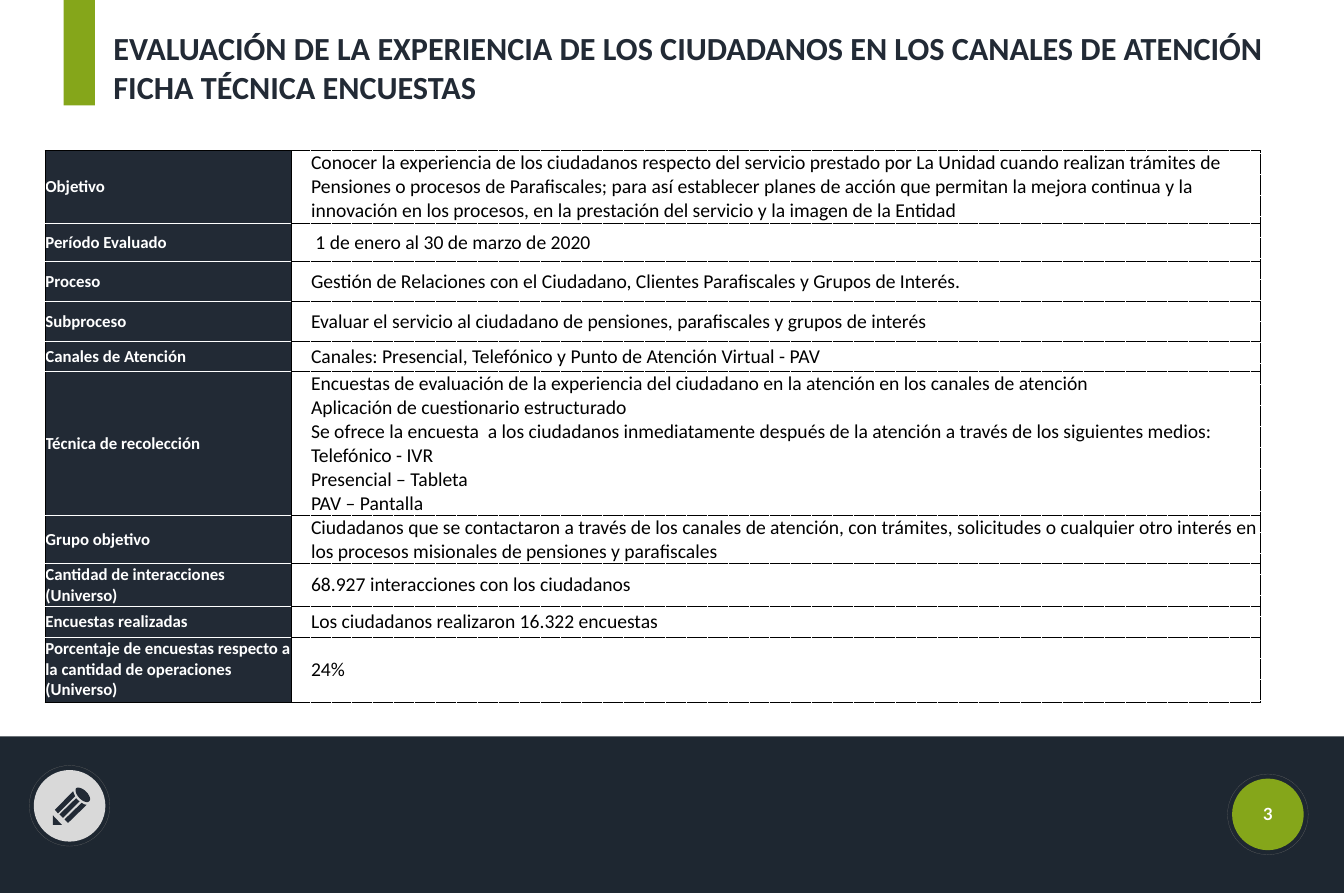
"""Build the survey fact-sheet slide on citizen experience across service channels."""
import dataclasses

import lxml.etree
import pptx
import pptx.dml.color
import pptx.enum.dml
import pptx.enum.shapes
import pptx.enum.text
import pptx.oxml.ns
import pptx.util

Pt = pptx.util.Pt
SHAPES = pptx.enum.shapes.MSO_SHAPE
ALIGN = pptx.enum.text.PP_ALIGN
ANCHOR = pptx.enum.text.MSO_ANCHOR


@dataclasses.dataclass(frozen=True)
class Theme:
    navy: str = "222A35"
    footer: str = "1E2731"
    green: str = "85A61A"
    grey: str = "D9D9D9"
    ring: str = "666666"
    white: str = "FFFFFF"
    black: str = "000000"
    font: str = "Calibri"
    number_font: str = "Lato"
    title_size: int = 46
    label_size: int = 24
    value_size: int = 28


theme = Theme()


def add_filled(shapes, kind, left, top, width, height, color):
    shape = shapes.add_shape(kind, Pt(left), Pt(top), Pt(width), Pt(height))
    shape.shadow.inherit = False
    shape.fill.solid()
    shape.fill.fore_color.rgb = pptx.dml.color.RGBColor.from_string(color)
    shape.line.fill.background()
    return shape


def format_text(text_frame, font, size, color, bold, alignment=ALIGN.LEFT):
    for paragraph in text_frame.paragraphs:
        paragraph.alignment = alignment
        for run in paragraph.runs:
            run.font.name = font
            run.font.size = Pt(size)
            run.font.bold = bold
            run.font.color.rgb = pptx.dml.color.RGBColor.from_string(color)


presentation = pptx.Presentation()
presentation.slide_width = Pt(1919.52)
presentation.slide_height = Pt(1275.84)
slide = presentation.slides.add_slide(presentation.slide_layouts[5])
shapes = slide.shapes

add_filled(shapes, SHAPES.RECTANGLE, 0, 1051.92, 1919.52, 223.92, theme.footer)
add_filled(shapes, SHAPES.RECTANGLE, 90.72, 0, 44.64, 150.5, theme.green)

badge_size, ring_gap = 102.24, 6.5
for left, top, color in [(48.24, 1100.16, theme.grey), (1759.68, 1112.4, theme.green)]:
    add_filled(shapes, SHAPES.OVAL, left, top, badge_size, badge_size, color)
    ring_size = badge_size + 2 * ring_gap
    ring = add_filled(shapes, SHAPES.OVAL, left - ring_gap, top - ring_gap,
                      ring_size, ring_size, theme.footer)
    ring.fill.background()
    ring.line.color.rgb = pptx.dml.color.RGBColor.from_string(theme.ring)
    ring.line.width = Pt(0.25)
    ring.line.dash_style = pptx.enum.dml.MSO_LINE.SQUARE_DOT

eraser_curves = [
    [(46, 3), (43, 7), (46, 16), (53, 23)],
    [(53, 23), (60, 30), (69, 33), (72, 29)],
    [(72, 29), (76, 26), (73, 17), (66, 10)],
    [(66, 10), (59, 3), (50, 0), (46, 3)],
]
curve_steps = 6
eraser = []
for start, first, second, end in eraser_curves:
    for step in range(curve_steps):
        t = step / curve_steps
        weights = [(1 - t) ** 3, 3 * t * (1 - t) ** 2, 3 * t ** 2 * (1 - t), t ** 3]
        eraser.append(tuple(
            sum(weight * point[axis] for weight, point in zip(weights, (start, first, second, end)))
            for axis in (0, 1)))
pencil_outlines = [
    [(0, 57), (18, 76), (0, 76)],
    eraser,
    [(57, 32), (23, 65), (30, 72), (67, 36), (62, 35)],
    [(50, 27), (46, 23), (13, 55), (20, 62), (53, 29)],
    [(40, 9), (4, 46), (10, 53), (44, 19), (42, 14)],
]
scaled_outlines = [[(10 * x, 10 * y) for x, y in outline] for outline in pencil_outlines]
builder = shapes.build_freeform(*scaled_outlines[0][0], scale=Pt(0.072))
for index, outline in enumerate(scaled_outlines):
    if index:
        builder.move_to(*outline[0])
    builder.add_line_segments(outline[1:], close=True)
pencil = builder.convert_to_shape(Pt(75.6), Pt(1123.92))
pencil.shadow.inherit = False
pencil.fill.solid()
pencil.fill.fore_color.rgb = pptx.dml.color.RGBColor.from_string(theme.navy)
pencil.line.fill.background()

page_number = shapes.add_textbox(Pt(1765.44), Pt(1141.2), Pt(90.72), Pt(43.92))
page_number.text_frame.word_wrap = True
page_number.text_frame.vertical_anchor = ANCHOR.MIDDLE
page_number.text_frame.text = "3"
format_text(page_number.text_frame, theme.number_font, theme.label_size, theme.white, True,
            ALIGN.CENTER)

title = shapes.title
title.left, title.top, title.width, title.height = Pt(154.8), Pt(36.72), Pt(1686.24), Pt(118.8)
title.text_frame.text = (
    "EVALUACIÓN DE LA EXPERIENCIA DE LOS CIUDADANOS EN LOS CANALES DE ATENCIÓN\n"
    "FICHA TÉCNICA ENCUESTAS")
title.text_frame.word_wrap = True
title.text_frame.auto_size = pptx.enum.text.MSO_AUTO_SIZE.NONE
title.text_frame.vertical_anchor = ANCHOR.TOP
format_text(title.text_frame, theme.font, theme.title_size, theme.navy, True)

fact_rows = [
    (103.5, "Objetivo",
     "Conocer la experiencia de los ciudadanos respecto del servicio prestado por La Unidad "
     "cuando realizan trámites de Pensiones o procesos de Parafiscales; para así establecer "
     "planes de acción que permitan la mejora continua y la innovación en los procesos, en la "
     "prestación del servicio y la imagen de la Entidad"),
    (54.5, "Período Evaluado", " 1 de enero al 30 de marzo de 2020"),
    (57.5, "Proceso",
     "Gestión de Relaciones con el Ciudadano, Clientes Parafiscales y Grupos de Interés."),
    (57.5, "Subproceso",
     "Evaluar el servicio al ciudadano de pensiones, parafiscales y grupos de interés"),
    (42.5, "Canales de Atención",
     "Canales: Presencial, Telefónico y Punto de Atención Virtual - PAV"),
    (205, "Técnica de recolección",
     "Encuestas de evaluación de la experiencia del ciudadano en la atención en los canales de "
     "atención\nAplicación de cuestionario estructurado\v"
     "Se ofrece la encuesta  a los ciudadanos inmediatamente después de la atención a través "
     "de los siguientes medios:\nTelefónico - IVR\nPresencial – Tableta\nPAV – Pantalla"),
    (69, "Grupo objetivo",
     "Ciudadanos que se contactaron a través de los canales de atención, con trámites, "
     "solicitudes o cualquier otro interés en los procesos misionales de pensiones y "
     "parafiscales"),
    (62, "Cantidad de interacciones (Universo)", "68.927 interacciones con los ciudadanos"),
    (43.5, "Encuestas realizadas", "Los ciudadanos realizaron 16.322 encuestas"),
    (92.5, "Porcentaje de encuestas respecto a la cantidad de operaciones (Universo)", "24%"),
]
table_height = sum(height for height, label, value in fact_rows)
table = shapes.add_table(len(fact_rows), 2, Pt(64.08), Pt(215.28), Pt(1735.2),
                         Pt(table_height)).table
table.first_row = table.horz_banding = False
table.columns[0].width, table.columns[1].width = Pt(351.36), Pt(1383.84)

last_row = len(fact_rows) - 1
for row, (height, label, value) in enumerate(fact_rows):
    table.rows[row].height = Pt(height)
    label_top = theme.black if row == 0 else theme.white
    label_bottom = theme.black if row == last_row else theme.white
    label_borders = [("lnL", theme.black, "solid"), ("lnR", theme.black, "solid"),
                     ("lnT", label_top, "solid"), ("lnB", label_bottom, "solid")]
    value_borders = [("lnL", theme.black, "solid"), ("lnR", theme.black, "dot"),
                     ("lnT", theme.black, "dot"), ("lnB", theme.black, "dot")]
    for column, (text, borders) in enumerate([(label, label_borders), (value, value_borders)]):
        cell = table.cell(row, column)
        cell.margin_left = cell.margin_right = cell.margin_top = Pt(0.72)
        cell.margin_bottom = Pt(0)
        cell.vertical_anchor = ANCHOR.MIDDLE
        cell.text_frame.text = text
        properties = cell._tc.get_or_add_tcPr()
        for side, color, dash in borders:
            line = lxml.etree.SubElement(properties, pptx.oxml.ns.qn(f"a:{side}"), w=str(Pt(1)))
            fill = lxml.etree.SubElement(line, pptx.oxml.ns.qn("a:solidFill"))
            lxml.etree.SubElement(fill, pptx.oxml.ns.qn("a:srgbClr"), val=color)
            lxml.etree.SubElement(line, pptx.oxml.ns.qn("a:prstDash"), val=dash)
        if column == 0:
            cell.fill.solid()
            cell.fill.fore_color.rgb = pptx.dml.color.RGBColor.from_string(theme.navy)
            format_text(cell.text_frame, theme.font, theme.label_size, theme.white, True)
        else:
            cell.fill.background()
            format_text(cell.text_frame, theme.font, theme.value_size, theme.black, False)
            for paragraph in cell.text_frame.paragraphs:
                paragraph._p.get_or_add_pPr().set("marL", str(Pt(28.08)))

presentation.save("out.pptx")
